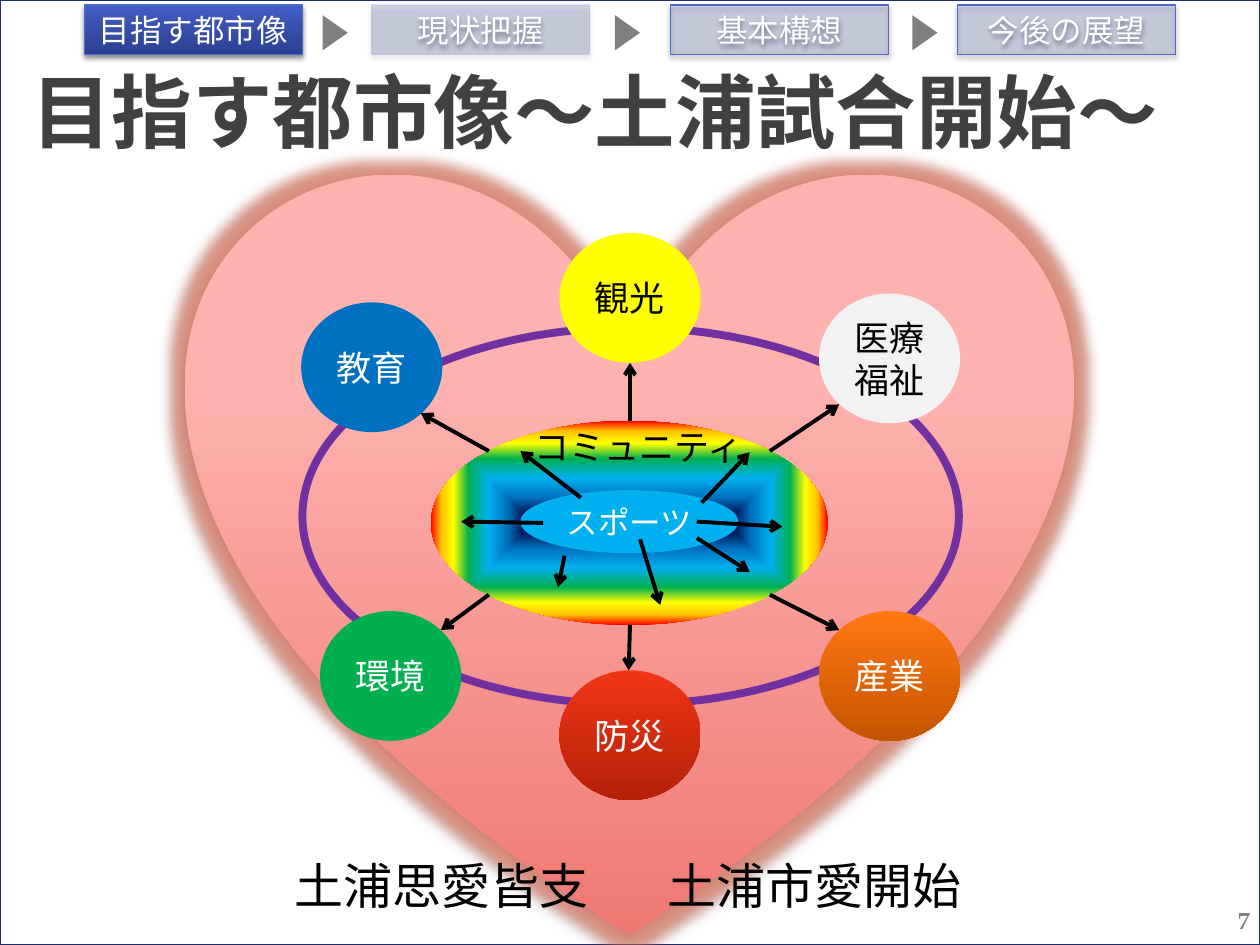
import pptx
import pptx.util
import pptx.dml.color
import pptx.enum.shapes
import pptx.enum.text
import pptx.oxml
import pptx.oxml.ns
from lxml import etree

Inches = pptx.util.Inches
Pt = pptx.util.Pt
qn = pptx.oxml.ns.qn
SHAPE = pptx.enum.shapes.MSO_SHAPE
ALIGN = pptx.enum.text.PP_ALIGN
ANCHOR = pptx.enum.text.MSO_ANCHOR

SERIF = "TeX Gyre Pagella"
SANS = "Arial"
COLORS = {
    "white": "FFFFFF", "black": "000000", "gray": "808080", "title": "404040",
    "frame": "1F2E69", "tab": "31489F", "tab_line": "4E67C8",
    "ring": "7030A0", "sports": "00B0F0", "education": "0070C0",
    "tourism": "FFFF00", "welfare": "F2F2F2", "environment": "00B050",
    "glow": "E0705A",
}
GRADIENTS = {
    "active_tab": [(0, "435EC5"), (100, "2B4092")],
    "heart": [(28, "FDB2AF"), (100, "F07873")],
    "disaster": [(0, "F03617"), (100, "B52007")],
    "industry": [(0, "FF7813"), (100, "C45400")],
    "rainbow": [(11, "002060"), (25, "0070C0"), (44, "00B0F0"), (63, "00B050"),
                (78, "FFFF00"), (90, "FFC000"), (100, "FF0000")],
}


def rgb(name):
    return pptx.dml.color.RGBColor.from_string(COLORS[name])


def add_node(parent, tag, **attributes):
    return etree.SubElement(parent, qn(tag), {key: str(value) for key, value in attributes.items()})


def add_color(parent, color, opacity=100):
    node = add_node(parent, "a:srgbClr", val=color)
    if opacity < 100:
        add_node(node, "a:alpha", val=opacity * 1000)


def set_opacity(color_format_parent, opacity):
    color = color_format_parent.find(qn("a:solidFill")).find(qn("a:srgbClr"))
    add_node(color, "a:alpha", val=opacity * 1000)


def fill_gradient(shape, stops, from_center=False):
    shape.fill.gradient()
    gradient = shape._element.spPr.find(qn("a:gradFill"))
    for child in list(gradient):
        gradient.remove(child)
    stop_list = add_node(gradient, "a:gsLst")
    for position, color in stops:
        add_color(add_node(stop_list, "a:gs", pos=position * 1000), color)
    if from_center:
        area = add_node(gradient, "a:path", path="shape")
        add_node(area, "a:fillToRect", l=50000, t=50000, r=50000, b=50000)
    else:
        add_node(gradient, "a:lin", ang=5400000, scaled=0)


def add_effects(shape, shadow, glow=None):
    """shadow is (opacity, blur, distance); glow is (radius, opacity)."""
    effects = shape._element.spPr.find(qn("a:effectLst"))
    if glow:
        radius, opacity = glow
        add_color(add_node(effects, "a:glow", rad=Pt(radius)), COLORS["glow"], opacity)
    opacity, blur, distance = shadow
    node = add_node(effects, "a:outerShdw", blurRad=Pt(blur), dist=Pt(distance),
                    dir=5400000, rotWithShape=0)
    add_color(node, COLORS["black"], opacity)


def write_text(box, text, size=20, color="black", font=SERIF, bold=False,
               align=ALIGN.CENTER, anchor=ANCHOR.MIDDLE, wrap=True, inset=0):
    frame = box.text_frame
    frame.word_wrap = wrap
    frame.vertical_anchor = anchor
    frame.margin_left = frame.margin_right = Inches(inset)
    for index, line in enumerate(text.split("\n")):
        para = frame.add_paragraph() if index else frame.paragraphs[0]
        para.alignment = align
        span = para.add_run()
        span.text = line
        span.font.size = Pt(size)
        span.font.name = font
        span.font.bold = bold
        span.font.color.rgb = rgb(color)


def add_text(page, place, text, **text_format):
    box = page.shapes.add_textbox(*map(Inches, place))
    write_text(box, text, **text_format)


def add_shape(page, kind, place, fill=None, line=None, width=1):
    """fill names a plain colour or a gradient."""
    shape = page.shapes.add_shape(kind, *map(Inches, place))
    shape.shadow.inherit = False
    if fill in GRADIENTS:
        fill_gradient(shape, GRADIENTS[fill], from_center=fill == "rainbow")
    elif fill:
        shape.fill.solid()
        shape.fill.fore_color.rgb = rgb(fill)
    else:
        shape.fill.background()
    if line:
        shape.line.color.rgb = rgb(line)
        shape.line.width = Pt(width)
    else:
        shape.line.fill.background()
    return shape


def add_arrow(page, start, end):
    arrow = page.shapes.add_connector(pptx.enum.shapes.MSO_CONNECTOR.STRAIGHT,
                                      *map(Inches, start + end))
    arrow.line.color.rgb = rgb("black")
    arrow.line.width = Pt(2.25)
    add_node(arrow.line._get_or_add_ln(), "a:tailEnd", type="arrow")
    add_node(arrow._element.spPr, "a:effectLst")


def add_tabs(page):
    tabs = [(0.67, "目指す都市像"), (2.95, "現状把握"), (5.32, "基本構想"), (7.6, "今後の展望")]
    for index, (left, label) in enumerate(tabs):
        active = index == 0
        tab = add_shape(page, SHAPE.RECTANGLE, (left, 0.04, 1.73, 0.39),
                        "active_tab" if active else "tab", "tab_line", 0.75)
        if not active:
            set_opacity(tab._element.spPr, 20)
        if index == 1:
            set_opacity(tab.line._get_or_add_ln(), 20)
        add_effects(tab, (45, 3.1, 1.8))
        write_text(tab, label, size=18, color="white", font=SANS)
    for left in (2.52, 4.84, 7.2):
        marker = add_shape(page, SHAPE.ISOSCELES_TRIANGLE, (left, 0.16, 0.28, 0.2), "gray")
        marker.rotation = 90


def add_diagram(page):
    # Heart, ring and community
    heart = add_shape(page, SHAPE.HEART, (1.49, 1.31, 7.01, 6.11), "heart")
    add_effects(heart, (32, 3.5, 2.2), glow=(14, 65))
    add_shape(page, SHAPE.OVAL, (2.4, 2.6, 5.21, 2.99), line="ring", width=4.5)
    add_shape(page, SHAPE.OVAL, (3.42, 3.34, 3.15, 1.62), "rainbow")

    # Fields around the ring
    fields = [
        (2.39, 2.4, "教育", "education", "white"),
        (4.44, 1.85, "観光", "tourism", "black"),
        (6.5, 2.33, "医療\n福祉", "welfare", "black"),
        (2.54, 4.85, "環境", "environment", "white"),
        (4.44, 5.32, "防災", "disaster", "white"),
        (6.5, 4.85, "産業", "industry", "white"),
    ]
    for left, top, label, fill, color in fields:
        field = add_shape(page, SHAPE.OVAL, (left, top, 1.12, 1.03), fill)
        write_text(field, label, color=color)

    # Sports at the centre
    sports = add_shape(page, SHAPE.OVAL, (4.13, 3.89, 1.73, 0.5), "sports")
    write_text(sports, "スポーツ", size=18, color="white")

    # Arrows from community to fields, then from sports to community
    arrows = [
        ((3.88, 3.58), (3.34, 3.28)), ((5, 3.34), (5, 2.88)),
        ((6.11, 3.58), (6.66, 3.21)), ((3.88, 4.72), (3.5, 5)),
        ((5, 4.96), (4.99, 5.32)), ((6.11, 4.72), (6.66, 5)),
        ((4.31, 4.15), (3.66, 4.14)), ((5.57, 3.99), (5.95, 3.59)),
        ((4.61, 3.95), (4.13, 3.58)), ((5.08, 4.28), (5.24, 4.8)),
        ((4.48, 4.41), (4.43, 4.66)), ((5.53, 4.27), (5.95, 4.54)),
        ((5.53, 4.14), (6.21, 4.18)),
    ]
    for start, end in arrows:
        add_arrow(page, start, end)
    add_text(page, (4.14, 3.33, 1.88, 0.4), "コミュニティ", align=ALIGN.LEFT,
             anchor=ANCHOR.TOP, wrap=False, inset=0.1)


def main():
    deck = pptx.Presentation()
    deck.slide_width, deck.slide_height = Inches(10), Inches(7.5)
    page = deck.slides.add_slide(deck.slide_layouts[6])

    # Frame, navigation and title
    add_shape(page, SHAPE.RECTANGLE, (0, 0, 10, 7.5), "white", "frame", 1.25)
    add_tabs(page)
    add_text(page, (8.02, 7.1, 2, 0.4), "7", size=14, color="gray", bold=True,
             align=ALIGN.RIGHT, inset=0.1)
    add_text(page, (0, 0.44, 10, 1.25), "目指す都市像～土浦試合開始～", size=46,
             color="title", bold=True, align=ALIGN.LEFT, anchor=ANCHOR.TOP, inset=0.25)

    # Heart diagram and slogans
    add_diagram(page)
    for left, slogan in ((2.24, "土浦思愛皆支"), (5.2, "土浦市愛開始")):
        add_text(page, (left, 6.74, 2.56, 0.57), slogan, size=28, align=ALIGN.LEFT,
                 anchor=ANCHOR.TOP, wrap=False, inset=0.1)

    deck.save("out.pptx")


if __name__ == "__main__":
    main()
